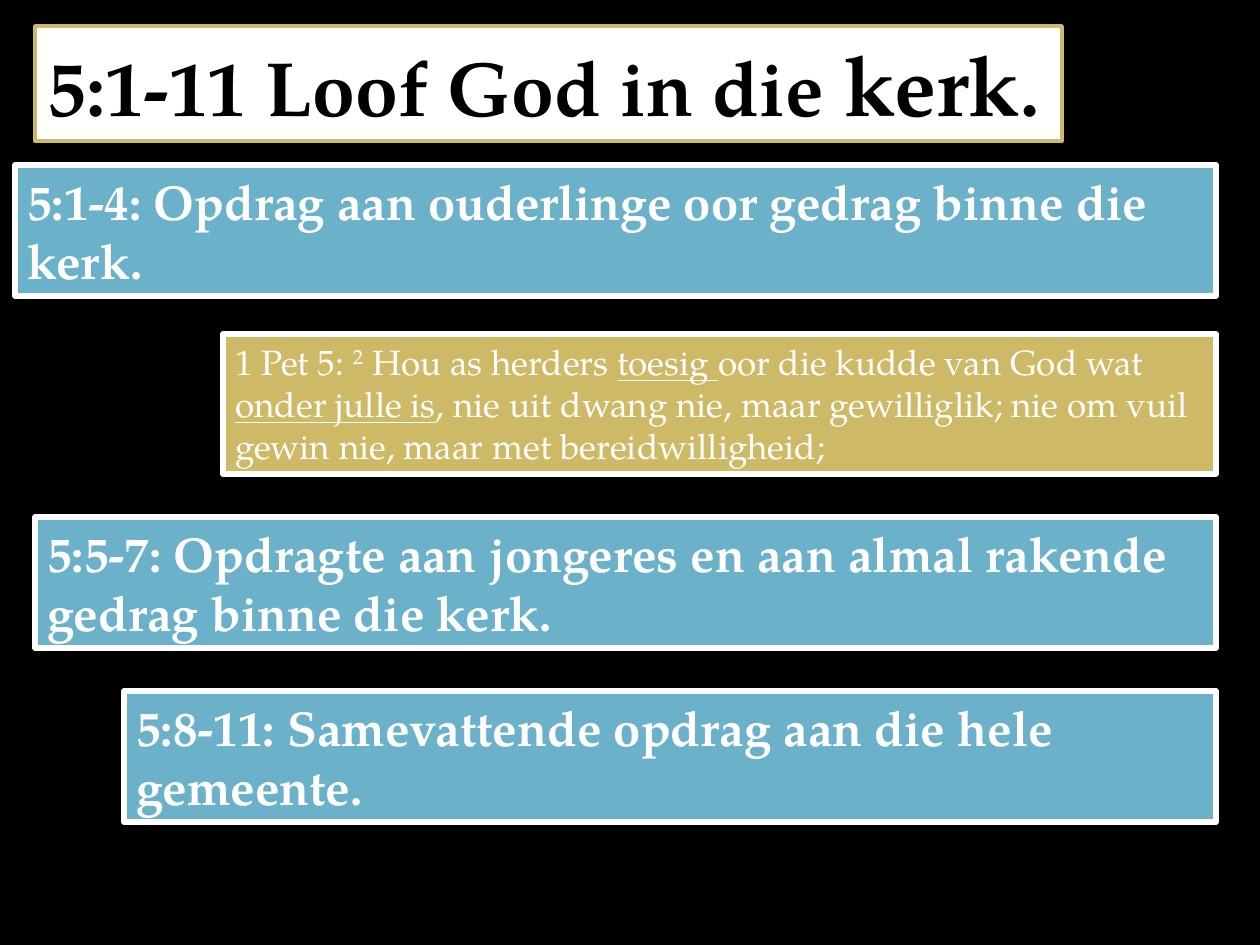
from pptx import Presentation
from pptx.dml.color import RGBColor
from pptx.enum.shapes import MSO_SHAPE
from pptx.enum.text import MSO_ANCHOR, MSO_AUTO_SIZE, PP_ALIGN
from pptx.util import Pt

RECT = MSO_SHAPE.RECTANGLE
TOP, LEFT, NO_FIT = MSO_ANCHOR.TOP, PP_ALIGN.LEFT, MSO_AUTO_SIZE.NONE
FONT = "TeX Gyre Pagella"
BLACK, WHITE, GOLD, BLUE = "000000", "FFFFFF", "CEB966", "6BB1C9"
EMU_PER_PX = 914400 / 126
RIGHT_EDGE = 1216


def px(n):
    return round(n * EMU_PER_PX)


def style_box(sp, fill, line, line_width, size, color, bold):
    """Format a box and its single paragraph, and return the paragraph."""
    sp.fill.solid()
    sp.fill.fore_color.rgb = RGBColor.from_string(fill)
    sp.line.color.rgb = RGBColor.from_string(line)
    sp.line.width = Pt(line_width)
    tf = sp.text_frame
    tf.auto_size = NO_FIT
    tf.word_wrap = True
    tf.vertical_anchor = TOP
    p = tf.paragraphs[0]
    p.alignment = LEFT
    p.font.name = FONT
    p.font.size = Pt(size)
    p.font.bold = bold
    p.font.color.rgb = RGBColor.from_string(color)
    return p


prs = Presentation()
prs.slide_width, prs.slide_height = px(1260), px(945)
s = prs.slides.add_slide(prs.slide_layouts[5])
s.background.fill.solid()
s.background.fill.fore_color.rgb = RGBColor.from_string(BLACK)

# Title
title = s.shapes.title
title.left, title.top, title.width, title.height = px(35), px(26), px(1027), px(115)
p = style_box(title, WHITE, GOLD, 2, 44, BLACK, True)
title.text_frame.word_wrap = False
for text, size in [("5:1-11 Loof God in die ", 44), ("kerk", 48), (".", 44)]:
    r = p.add_run()
    r.text = text
    r.font.size = Pt(size)

# Boxes: left, top, height, fill, size, bold, runs as (text, mark)
boxes = [
    (15, 165, 131, BLUE, 28, True,
     [("5:1-4: Opdrag aan ouderlinge oor gedrag binne die kerk.", "")]),
    (223, 334, 140, GOLD, 20, False,
     [("1 Pet 5: ", ""), ("2", "super"), (" Hou as herders ", ""),
      ("toesig ", "underline"), ("oor die kudde van God wat ", ""),
      ("onder julle is", "underline"),
      (", nie uit dwang nie, maar gewilliglik; nie om vuil gewin nie, "
       "maar met bereidwilligheid;", "")]),
    (35, 517, 131, BLUE, 28, True,
     [("5:5-7: Opdragte aan jongeres en aan almal rakende gedrag binne die kerk.", "")]),
    (124, 691, 131, BLUE, 28, True,
     [("5:8-11: Samevattende opdrag aan die hele gemeente.", "")]),
]
for left, top, height, fill, size, bold, runs in boxes:
    sp = s.shapes.add_shape(RECT, px(left), px(top), px(RIGHT_EDGE - left), px(height))
    sp.shadow.inherit = False
    p = style_box(sp, fill, WHITE, 3, size, WHITE, bold)
    for text, mark in runs:
        r = p.add_run()
        r.text = text
        if mark == "underline":
            r.font.underline = True
        elif mark == "super":
            r.font._element.set("baseline", "30000")

prs.save("out.pptx")
